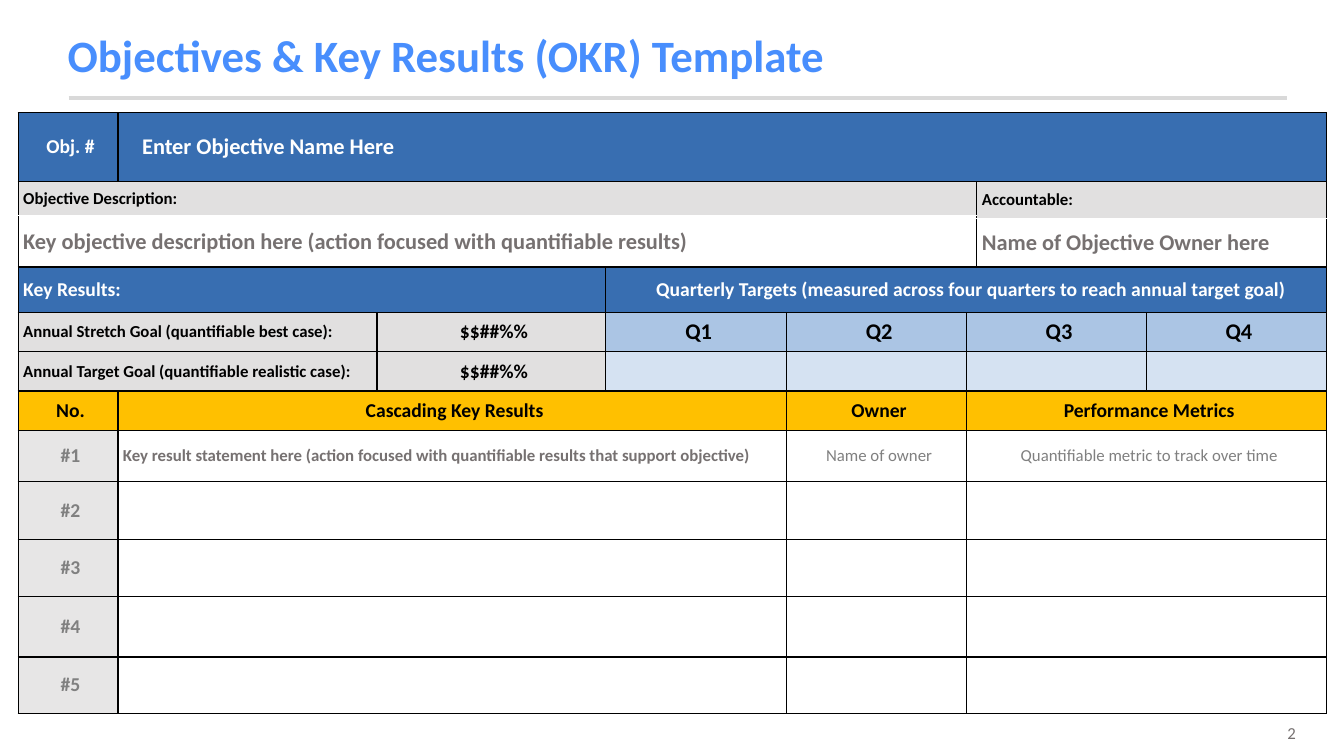
from dataclasses import dataclass

from pptx import Presentation
from pptx.dml.color import RGBColor
from pptx.enum.shapes import MSO_CONNECTOR as CONN
from pptx.enum.text import MSO_ANCHOR as ANCHOR, PP_ALIGN as ALIGN
from pptx.oxml.ns import qn
from pptx.util import Inches, Pt
from lxml.etree import SubElement


@dataclass(frozen=True)
class Theme:
    font: str = "Calibri"
    title: str = "488EFD"
    rule: str = "D9D9D9"
    blue: str = "386EB1"
    sky: str = "ABC5E4"
    pale: str = "D5E2F2"
    gold: str = "FFC000"
    silver: str = "E1E0E0"
    mist: str = "E7E6E6"
    white: str = "FFFFFF"
    black: str = "000000"
    hint: str = "767171"
    grey: str = "808080"
    title_size: int = 32
    large: int = 16
    medium: int = 14
    small: int = 12


T = Theme()
COLS = [0.99, 2.57, 2.27, 1.79, 1.79, 0.1, 1.68, 1.79]
ROWS = [0.68, 0.34, 0.03, 0.48, 0.45, 0.39, 0.39, 0.39, 0.51, 0.57, 0.57, 0.6, 0.56]


def set_all(obj, **values):
    for name, value in values.items():
        setattr(obj, name, value)


def write(p, text, size, color, bold=True, align=ALIGN.LEFT):
    p.alignment = align
    r = p.add_run()
    r.text = text
    set_all(r.font, name=T.font, size=Pt(size), bold=bold)
    r.font.color.rgb = RGBColor.from_string(color)


def add_header(s, left, top, width, height):
    # Title
    sp = s.shapes.title
    set_all(sp, left=Inches(left), top=Inches(top),
            width=Inches(width), height=Inches(height))
    tf = sp.text_frame
    set_all(tf, word_wrap=True, vertical_anchor=ANCHOR.MIDDLE)
    tf.paragraphs[0].line_spacing = 0.9
    write(tf.paragraphs[0], "Objectives & Key Results (OKR) Template",
          T.title_size, T.title)

    # Rule under the title
    x, y = left + 0.11, top + height + 0.01
    rule = s.shapes.add_connector(CONN.STRAIGHT, Inches(x), Inches(y),
                                  Inches(x + 12.08), Inches(y))
    rule.line.color.rgb = RGBColor.from_string(T.rule)
    rule.line.width = Pt(3)
    SubElement(rule._element.spPr, qn("a:effectLst"))


def add_page_number(s, left, top, width, height):
    sp = s.shapes.add_textbox(Inches(left), Inches(top), Inches(width), Inches(height))
    sp.text_frame.word_wrap = True
    write(sp.text_frame.paragraphs[0], "2", T.small, T.hint, False, ALIGN.RIGHT)


def set_borders(cell, top, bottom):
    tcPr = cell._tc.get_or_add_tcPr()
    for side, color in zip("LRTB", (T.black, T.black, top, bottom)):
        ln = SubElement(tcPr, qn(f"a:ln{side}"), w=str(Pt(1)))
        fill = SubElement(ln, qn("a:solidFill"))
        SubElement(fill, qn("a:srgbClr"), val=color)


def fill_block(tbl, row, col, rows, cols, fill, text="", size=T.medium,
               color=T.black, bold=True, align=ALIGN.CENTER, indent=0,
               top=T.black, bottom=T.black):
    """Format a block of cells, merge it and write its text."""
    for i in range(row, row + rows):
        for j in range(col, col + cols):
            cell = tbl.cell(i, j)
            set_all(cell, margin_left=Inches(0.05), margin_right=0, margin_top=0,
                    margin_bottom=0, vertical_anchor=ANCHOR.MIDDLE)
            set_borders(cell, top, bottom)
            cell.fill.solid()
            cell.fill.fore_color.rgb = RGBColor.from_string(fill)
            cell.text_frame.paragraphs[0].font.size = Pt(1)
    cell = tbl.cell(row, col)
    if rows * cols > 1:
        cell.merge(tbl.cell(row + rows - 1, col + cols - 1))
    if text:
        p = cell.text_frame.paragraphs[0]
        write(p, text, size, color, bold, align)
        if indent:
            p._p.get_or_add_pPr().set("marL", str(Inches(indent)))


def fill_objective(tbl):
    fill_block(tbl, 0, 0, 1, 1, T.blue, "Obj. #", color=T.white)
    fill_block(tbl, 0, 1, 1, 7, T.blue, "Enter Objective Name Here", T.large, T.white,
               align=ALIGN.LEFT, indent=0.19)
    label = dict(size=T.small, align=ALIGN.LEFT, bottom=T.white)
    hint = dict(size=T.large, color=T.hint, align=ALIGN.LEFT, top=T.white)
    fill_block(tbl, 1, 0, 1, 6, T.silver, "Objective Description:", **label)
    fill_block(tbl, 1, 6, 2, 2, T.silver, "Accountable:", **label)
    fill_block(tbl, 2, 0, 2, 6, T.white, "Key objective description here "
               "(action focused with quantifiable results)", **hint)
    fill_block(tbl, 3, 6, 1, 2, T.white, "Name of Objective Owner here", **hint)


def fill_targets(tbl):
    fill_block(tbl, 4, 0, 1, 3, T.blue, "Key Results:", color=T.white, align=ALIGN.LEFT)
    fill_block(tbl, 4, 3, 1, 5, T.blue, " Quarterly Targets (measured across four "
               "quarters to reach annual target goal)", color=T.white)
    goals = ["Annual Stretch Goal (quantifiable best case):",
             "Annual Target Goal (quantifiable realistic case):"]
    for row, goal in enumerate(goals, 5):
        fill_block(tbl, row, 0, 1, 2, T.silver, goal, T.small, align=ALIGN.LEFT)
        fill_block(tbl, row, 2, 1, 1, T.silver, "$$##%%")
    for q, (col, span) in enumerate([(3, 1), (4, 1), (5, 2), (7, 1)], 1):
        fill_block(tbl, 5, col, 1, span, T.sky, f"Q{q}", T.large)
        fill_block(tbl, 6, col, 1, span, T.pale)


def fill_key_results(tbl):
    spans = [(0, 1), (1, 3), (4, 1), (5, 3)]
    heads = ["No.", "Cascading Key Results", "Owner", "Performance Metrics"]
    for (col, span), head in zip(spans, heads):
        fill_block(tbl, 7, col, 1, span, T.gold, head)

    hints = [dict(text="Key result statement here (action focused with quantifiable "
                       "results that support objective)",
                  size=T.small, color=T.hint, align=ALIGN.LEFT),
             dict(text="Name of owner", size=T.small, color=T.grey, bold=False),
             dict(text="Quantifiable metric to track over time",
                  size=T.small, color=T.grey, bold=False)]
    for n in range(1, 6):
        fill_block(tbl, 7 + n, 0, 1, 1, T.mist, f"#{n}", color=T.grey)
        for (col, span), hint in zip(spans[1:], hints):
            fill_block(tbl, 7 + n, col, 1, span, T.white, **(hint if n == 1 else {}))


def add_okr_table(s, left, top):
    tbl = s.shapes.add_table(len(ROWS), len(COLS), Inches(left), Inches(top),
                             Inches(sum(COLS)), Inches(sum(ROWS))).table
    set_all(tbl, first_row=False, horz_banding=False)
    for column, width in zip(tbl.columns, COLS):
        column.width = Inches(width)
    for row, height in zip(tbl.rows, ROWS):
        row.height = Inches(height)
    fill_objective(tbl)
    fill_targets(tbl)
    fill_key_results(tbl)


def main():
    prs = Presentation()
    set_all(prs, slide_width=Inches(13.33), slide_height=Inches(7.5))
    s = prs.slides.add_slide(prs.slide_layouts[5])
    add_header(s, 0.57, 0.19, 10.94, 0.77)
    add_okr_table(s, 0.18, 1.12)
    # Page number, clear of the table's lower edge
    add_page_number(s, 11.93, 7.12, 1.02, 0.3)
    prs.save("out.pptx")


if __name__ == "__main__":
    main()
